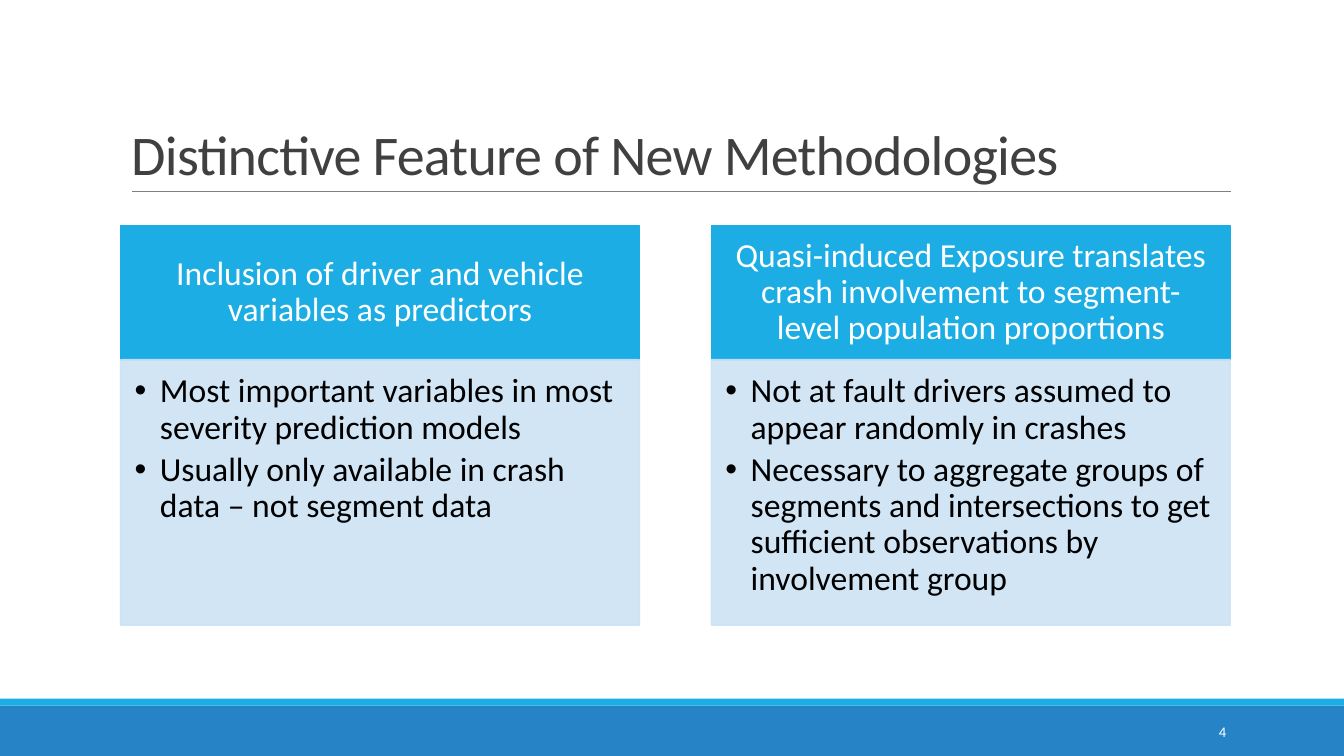
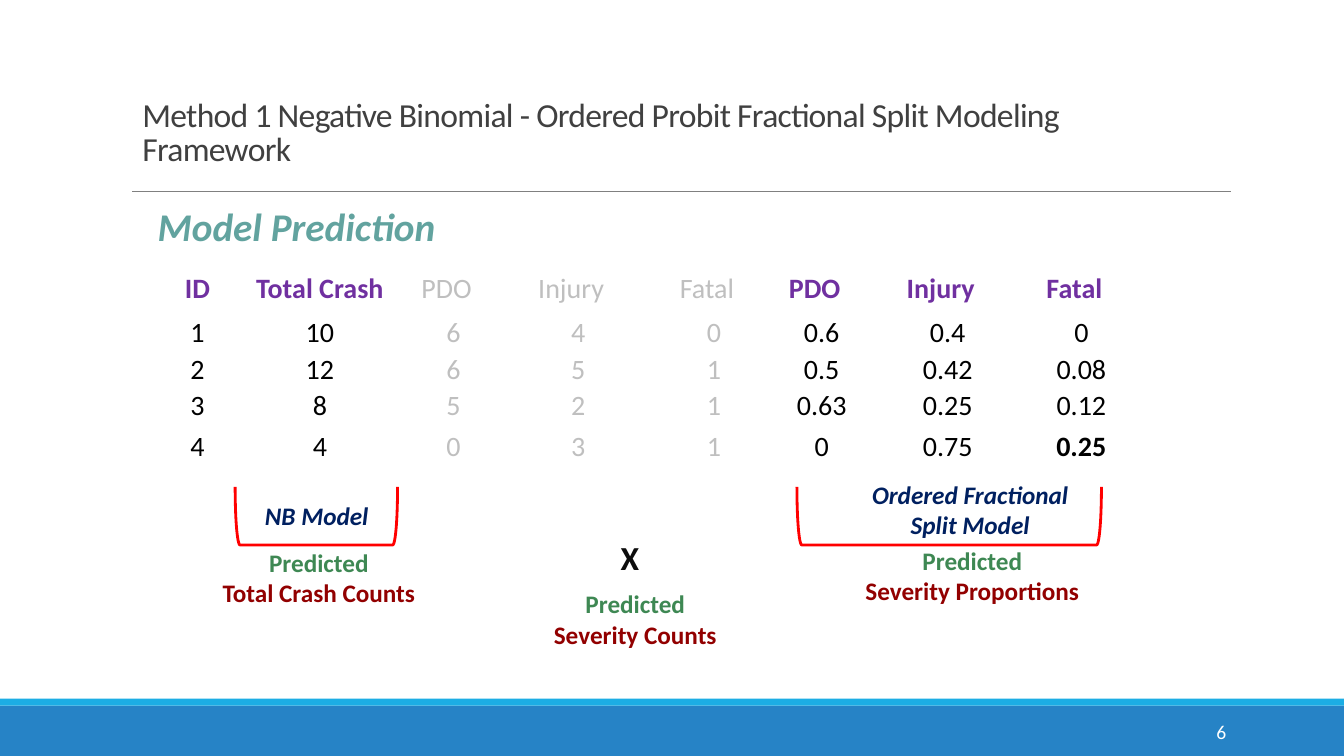
from lxml import etree
from pptx import Presentation
from pptx.dml.color import RGBColor
from pptx.enum import shapes, text
from pptx.oxml.ns import qn
from pptx.util import Pt

BLUE = RGBColor(0x26, 0x83, 0xC6)
SKY = RGBColor(0x1C, 0xAD, 0xE4)
PALE = RGBColor(0xCD, 0xE3, 0xF5)
WHITE = RGBColor(0xFF, 0xFF, 0xFF)
BLACK = RGBColor(0, 0, 0)
INK = RGBColor(0x0D, 0x0D, 0x0D)
CHARCOAL = RGBColor(0x40, 0x40, 0x40)
GRAY = RGBColor(0x80, 0x80, 0x80)
FADED = RGBColor(0xBF, 0xBF, 0xBF)
PURPLE = RGBColor(0x70, 0x30, 0xA0)
NAVY = RGBColor(0x00, 0x20, 0x60)
GREEN = RGBColor(0x3E, 0x88, 0x53)
MAROON = RGBColor(0x92, 0, 0)
RED = RGBColor(0xFF, 0, 0)
TEAL = RGBColor(0x62, 0xA3, 0x9F)

CENTER, RIGHT = text.PP_ALIGN.CENTER, text.PP_ALIGN.RIGHT
TOP, MIDDLE, BOTTOM = (text.MSO_ANCHOR.TOP, text.MSO_ANCHOR.MIDDLE,
                       text.MSO_ANCHOR.BOTTOM)

FEATURES = [
    ("Inclusion of driver and vehicle variables as predictors",
     ["Most important variables in most severity prediction models",
      "Usually only available in crash data – not segment data"]),
    ("Quasi-induced Exposure translates crash involvement to segment-level "
     "population proportions",
     ["Not at fault drivers assumed to appear randomly in crashes",
      "Necessary to aggregate groups of segments and intersections to get "
      "sufficient observations by involvement group"]),
]

PREDICTIONS = [
    ("ID", "Total Crash", "PDO", "Injury", "Fatal", "PDO", "Injury", "Fatal"),
    ("1", "10", "6", "4", "0", "0.6", "0.4", "0"),
    ("2", "12", "6", "5", "1", "0.5", "0.42", "0.08"),
    ("3", "8", "5", "2", "1", "0.63", "0.25", "0.12"),
    ("4", "4", "0", "3", "1", "0", "0.75", "0.25"),
]
COLUMN_WIDTHS = (62, 113, 78, 100, 94, 60, 120, 71)
ROW_HEIGHTS = (37, 26, 26, 26, 32)
OBSERVED = range(2, 5)
HIGHLIGHT = (4, 7)

MODELS = [  # lines, left, top, width
    (["Ordered Fractional", "Split Model"], 556.5, 339, 273),
    (["NB Model"], 157.5, 353.5, 137.5),
]
OUTCOMES = [
    ("Total Crash Counts", 142.5, 387.5, 170.5),
    ("Severity Proportions", 594.5, 386, 200),
    ("Severity Counts", 368.5, 417, 170.5),
]
BRACKETS = [(678, 217.5), (226, 116)]  # centre, span


def write(frame, lines, size, color, bold=False, italic=False, align=None,
          anchor=TOP, insets=(7.2, 3.6, 7.2, 3.6), leading=None, after=0,
          tracking=0, hanging=None):
    """Fill a text frame; a line is a string or a (string, colour) pair."""
    frame.word_wrap = True
    frame.auto_size = text.MSO_AUTO_SIZE.NONE
    frame.vertical_anchor = anchor
    (frame.margin_left, frame.margin_top,
     frame.margin_right, frame.margin_bottom) = map(Pt, insets)
    for i, line in enumerate(lines):
        words, ink = line if isinstance(line, tuple) else (line, color)
        para = frame.add_paragraph() if i else frame.paragraphs[0]
        para.alignment = align
        para.space_before, para.space_after = Pt(0), Pt(after)
        if leading:
            para.line_spacing = leading
        if hanging:
            props = para._p.get_or_add_pPr()
            props.set("marL", str(Pt(hanging)))
            props.set("indent", str(-Pt(hanging)))
        run = para.add_run()
        run.text = words
        font = run.font
        font.name, font.size, font.color.rgb = "Calibri", Pt(size), ink
        font.bold, font.italic = bold, italic
        if tracking:
            run._r.get_or_add_rPr().set("spc", str(round(tracking * 100)))


def place(shape, *box):
    shape.left, shape.top, shape.width, shape.height = map(Pt, box)


def label(slide, lines, left, top, width, height, **style):
    box = slide.shapes.add_textbox(*map(Pt, (left, top, width, height)))
    write(box.text_frame, lines, **style)


def paint(shape, color, opacity=None):
    shape.fill.solid()
    shape.fill.fore_color.rgb = color
    shape.line.color.rgb = color
    shape.line.width = Pt(1.25)
    if opacity:
        for tint in list(shape._element.spPr.iter(qn("a:srgbClr"))):
            etree.SubElement(tint, qn("a:alpha")).set("val", str(opacity * 1000))


def dress_master(master, slide):
    """Draw the bands and the title rule, then move them to the master."""
    parts = []
    for top, height, color in ((504, 36, BLUE), (499, 5, SKY)):
        band = slide.shapes.add_shape(shapes.MSO_SHAPE.RECTANGLE,
                                      *map(Pt, (0, top, 960, height)))
        band.shadow.inherit = False
        band.fill.solid()
        band.fill.fore_color.rgb = color
        band.line.fill.background()
        parts.append(band)
    rule = slide.shapes.add_connector(shapes.MSO_CONNECTOR.STRAIGHT,
                                      *map(Pt, (94.5, 136.8, 879, 136.8)))
    rule.line.color.rgb, rule.line.width = GRAY, Pt(0.5)
    etree.SubElement(rule._element.spPr, qn("a:effectLst"))
    for position, part in enumerate(parts + [rule], 2):
        master.shapes.element.insert(position, part._element)


def head_and_number(slide, title, title_box, title_size, number, number_size):
    place(slide.shapes.title, *title_box)
    write(slide.shapes.title.text_frame, [title], title_size, CHARCOAL,
          align=text.PP_ALIGN.LEFT, anchor=BOTTOM, leading=0.85, tracking=-0.5)
    label(slide, [number], 780, 508.5, 103, 28.5, size=number_size,
          color=WHITE, align=RIGHT, anchor=MIDDLE)


def features_slide(slide):
    head_and_number(slide, "Distinctive Feature of New Methodologies",
                    (86.5, 22.5, 792, 114.5), 40, "4", 10.5)
    for i, (heading, points) in enumerate(FEATURES):
        left = 86.2 + i * 422
        header, body = (slide.placeholders[2 * i + k] for k in (1, 2))
        place(header, left, 161, 370.5, 96)
        paint(header, SKY)
        write(header.text_frame, [heading], 24, WHITE, align=CENTER,
              anchor=MIDDLE, insets=(13.5, 8, 13.5, 8), leading=0.9)
        place(body, left, 257, 370.5, 189.5)
        paint(body, PALE, opacity=90)
        write(body.text_frame, points, 24, BLACK, leading=0.9, after=4.3,
              insets=(10, 10, 13.5, 15), hanging=18)


def prediction_table(slide):
    table = slide.shapes.add_table(
        len(PREDICTIONS), len(COLUMN_WIDTHS), Pt(110), Pt(188),
        Pt(sum(COLUMN_WIDTHS)), Pt(sum(ROW_HEIGHTS))).table
    table.first_row = table.horz_banding = False
    for column, width in zip(table.columns, COLUMN_WIDTHS):
        column.width = Pt(width)
    for r, values in enumerate(PREDICTIONS):
        table.rows[r].height = Pt(ROW_HEIGHTS[r])
        for c, value in enumerate(values):
            cell = table.cell(r, c)
            cell.fill.background()
            observed = c in OBSERVED
            color = FADED if observed else BLACK if r else PURPLE
            bold = (r == 0 and not observed) or (r, c) == HIGHLIGHT
            nudge = 10 if r == 0 and c >= OBSERVED.start else 0
            write(cell.text_frame, [value], 20, color, bold=bold, align=CENTER,
                  insets=(0, 0, nudge, 0))
            cell.vertical_anchor = MIDDLE
            cell.margin_left = cell.margin_top = cell.margin_bottom = 0
            cell.margin_right = Pt(nudge)


def bracket(slide, center, span, depth=41.5, middle=368.5):
    """Draw a bracket that opens upward under a group of columns."""
    shape = slide.shapes.add_shape(
        shapes.MSO_SHAPE.LEFT_BRACKET, Pt(center - depth / 2),
        Pt(middle - span / 2), Pt(depth), Pt(span))
    shape.rotation = 270
    shape.shadow.inherit = False
    shape.fill.background()
    shape.line.color.rgb, shape.line.width = RED, Pt(2)


def framework_slide(slide):
    head_and_number(slide, "Method 1 Negative Binomial - Ordered Probit "
                    "Fractional Split Modeling Framework",
                    (94.5, 58.5, 769.5, 65.5), 24, "6", 14)
    label(slide, ["Model Prediction"], 50.5, 141, 322.5, 41, size=28,
          color=TEAL, bold=True, italic=True, align=CENTER)
    prediction_table(slide)
    for center, span in BRACKETS:
        bracket(slide, center, span)
    for lines, left, top, width in MODELS:
        label(slide, lines, left, top, width, 29 + 22 * (len(lines) - 1),
              size=18, color=NAVY, bold=True, italic=True, align=CENTER)
    for outcome, left, top, width in OUTCOMES:
        label(slide, ["Predicted", (outcome, MAROON)], left, top, width, 51,
              size=18, color=GREEN, bold=True, align=CENTER)
    label(slide, ["X"], 357, 380, 186, 36, size=24, color=INK, bold=True,
          align=CENTER)


def main():
    deck = Presentation()
    deck.slide_width, deck.slide_height = Pt(960), Pt(540)
    comparison, title_only = deck.slide_layouts[4], deck.slide_layouts[5]
    features = deck.slides.add_slide(comparison)
    dress_master(deck.slide_master, features)
    features_slide(features)
    framework_slide(deck.slides.add_slide(title_only))
    deck.save("out.pptx")


if __name__ == "__main__":
    main()
